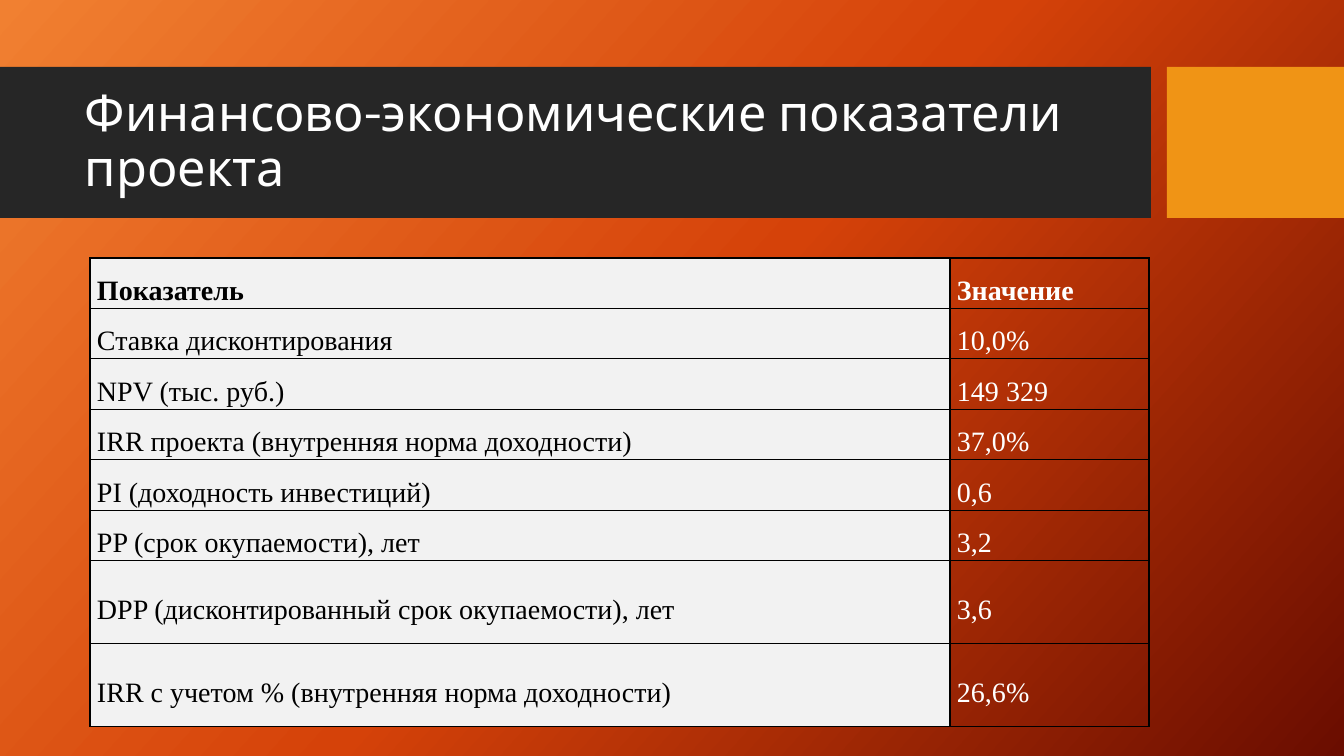
from copy import deepcopy

from lxml.etree import SubElement
from pptx import Presentation
from pptx.dml.color import RGBColor
from pptx.enum.shapes import MSO_SHAPE as Preset
from pptx.enum.text import MSO_ANCHOR as Anchor, PP_ALIGN as Align
from pptx.oxml.ns import qn
from pptx.util import Pt

EMU_PER_PX = 914400 / 100.8
COLORS = {
    "glow": "F18031", "flame": "D54209", "ember": "6A0D00",
    "band": "262626", "accent": "F09415", "label": "F2F2F2",
    "black": "000000", "white": "FFFFFF",
}
INDICATORS = [
    ("Показатель", "Значение"),
    ("Ставка дисконтирования", "10,0%"),
    ("NPV (тыс. руб.)", "149 329"),
    ("IRR проекта (внутренняя норма доходности)", "37,0%"),
    ("PI (доходность инвестиций)", "0,6"),
    ("PP (срок окупаемости), лет", "3,2"),
    ("DPP (дисконтированный срок окупаемости), лет", "3,6"),
    ("IRR с учетом % (внутренняя норма доходности)", "26,6%"),
]


def px(length):
    return round(length * EMU_PER_PX)


def rgb(name):
    return RGBColor.from_string(COLORS[name])


def style(paragraph, font_name, size, color, bold=False):
    font = paragraph.font
    font.name, font.size, font.bold = font_name, Pt(size), bold
    font.color.rgb = rgb(color)


def paint_background(slide):
    fill = slide.background.fill
    fill.gradient()
    fill.gradient_angle = 318
    first = fill.gradient_stops[0]._gs
    first.addnext(deepcopy(first))
    for stop, position, color in zip(fill.gradient_stops, (0, 0.5, 1), ("glow", "flame", "ember")):
        stop.position = position
        stop.color.rgb = rgb(color)


def add_block(slide, left, top, width, height, color):
    block = slide.shapes.add_shape(Preset.RECTANGLE, px(left), px(top), px(width), px(height))
    block.shadow.inherit = False
    block.fill.solid()
    block.fill.fore_color.rgb = rgb(color)
    block.line.fill.background()


def add_header(slide, left, top, width, height):
    accent_width, gap = 177, 16
    band_width = width - accent_width - gap
    add_block(slide, left, top, band_width, height, "band")
    add_block(slide, left + band_width + gap, top, accent_width, height, "accent")

    title = slide.shapes.add_textbox(px(left + 75), px(top + 16), px(band_width - 92), px(height - 32))
    frame = title.text_frame
    frame.word_wrap = True
    frame.vertical_anchor = Anchor.MIDDLE
    heading = frame.paragraphs[0]
    heading.text = "Финансово-экономические показатели проекта"
    heading.line_spacing = 0.9
    style(heading, "Karla", 36, "white")


def add_borders(cell):
    properties = cell._tc.get_or_add_tcPr()
    for side in ("a:lnL", "a:lnR", "a:lnT", "a:lnB"):
        border = SubElement(properties, qn(side), w=str(Pt(1)))
        paint = SubElement(border, qn("a:solidFill"))
        SubElement(paint, qn("a:srgbClr"), val=COLORS["black"])


def fill_cell(cell, text, is_label, is_header):
    add_borders(cell)
    if is_label:
        cell.fill.solid()
        cell.fill.fore_color.rgb = rgb("label")
    else:
        cell.fill.background()
    cell.vertical_anchor = Anchor.MIDDLE
    cell.margin_left = cell.margin_right = px(7)
    cell.margin_top = cell.margin_bottom = 0
    entry = cell.text_frame.paragraphs[0]
    entry.text = text
    entry.alignment = Align.JUSTIFY
    entry.line_spacing = 1.5
    style(entry, "Times New Roman", 20, "black" if is_label else "white", is_header)


def add_indicators(slide, left, top, width, height):
    value_width, tall_row, tall_count = 199, 83, 2
    short_count = len(INDICATORS) - tall_count
    short_row = (height - tall_row * tall_count) // short_count
    table = slide.shapes.add_table(len(INDICATORS), 2, px(left), px(top), px(width), px(height)).table
    table.first_row = table.horz_banding = False
    table.columns[0].width = px(width - value_width)
    table.columns[1].width = px(value_width)
    for index, indicator in enumerate(INDICATORS):
        table.rows[index].height = px(short_row if index < short_count else tall_row)
        for column, text in enumerate(indicator):
            fill_cell(table.cell(index, column), text, column == 0, index == 0)


def main():
    deck = Presentation()
    deck.slide_width, deck.slide_height = px(1344), px(756)
    slide = deck.slides.add_slide(deck.slide_layouts[6])
    paint_background(slide)
    add_header(slide, 0, 67, 1344, 151)
    add_indicators(slide, 90, 258, 1059, 445)
    deck.save("out.pptx")


if __name__ == "__main__":
    main()
